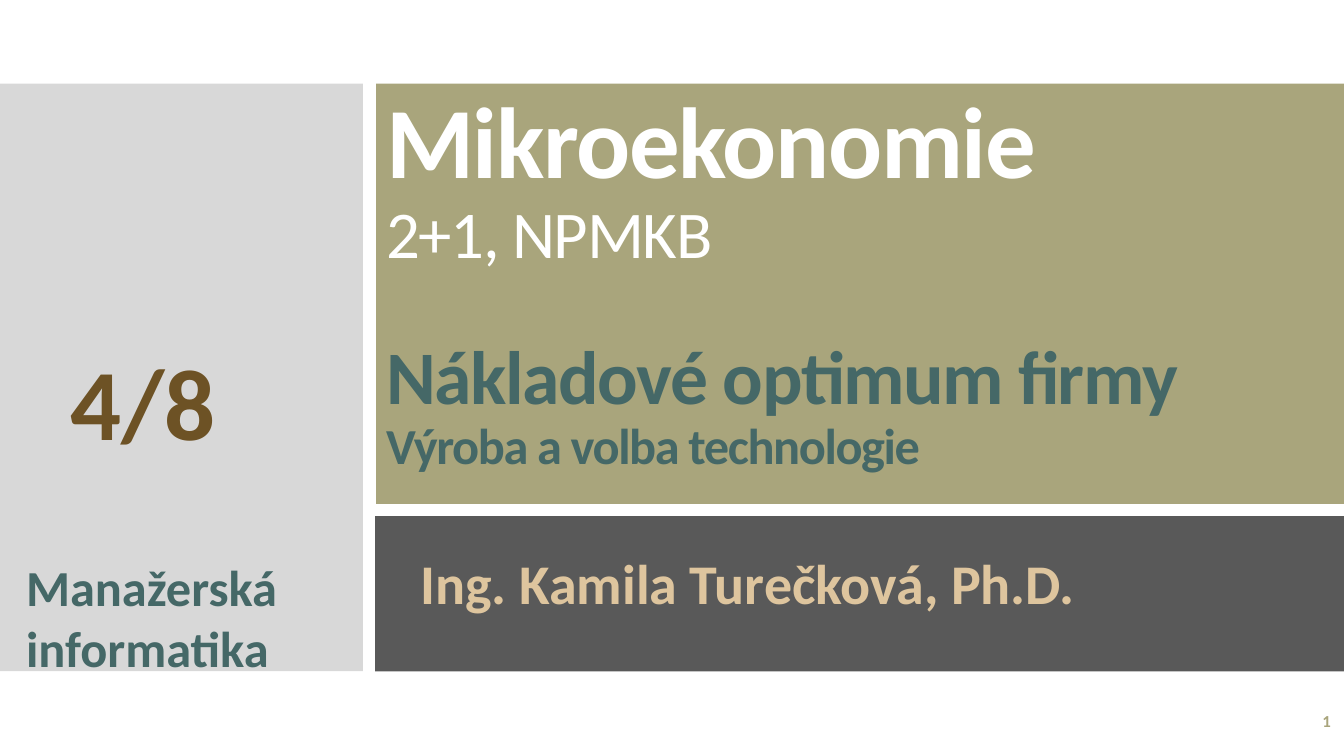
from dataclasses import dataclass

from lxml import etree
from pptx import Presentation
from pptx.dml.color import RGBColor
from pptx.enum.shapes import MSO_SHAPE
from pptx.enum.text import MSO_ANCHOR, MSO_AUTO_SIZE, PP_ALIGN
from pptx.oxml.ns import qn
from pptx.util import Inches, Pt

RECTANGLE = MSO_SHAPE.RECTANGLE
TOP, MIDDLE, BOTTOM = MSO_ANCHOR.TOP, MSO_ANCHOR.MIDDLE, MSO_ANCHOR.BOTTOM
LEFT, RIGHT = PP_ALIGN.LEFT, PP_ALIGN.RIGHT


@dataclass(frozen=True)
class Theme:
    font: str = "Calibri"
    white: str = "FFFFFF"
    olive: str = "A9A57C"
    grey: str = "C8C8C8"
    charcoal: str = "595959"
    teal: str = "456867"
    sand: str = "DEC59E"
    brown: str = "6D5225"
    display: float = 72
    topic: float = 54
    code: float = 47.7
    author: float = 40
    body: float = 36
    number: float = 12


theme = Theme()

# Content: text, size, colour, bold, space before in points
TITLE = [
    ("Mikroekonomie", theme.display, theme.white, True, 0),
    ("2+1, NPMKB", theme.code, theme.white, False, 0),
    ("Nákladové optimum firmy", theme.topic, theme.teal, True, 48),
    ("Výroba a volba technologie", theme.body, theme.teal, True, 0),
]
AUTHOR = [("Ing. Kamila Turečková, Ph.D.", theme.author, theme.sand, True, 0)]
LECTURE = [("4/8", theme.display, theme.brown, True, 0)]
PROGRAMME = [("Manažerská informatika", theme.body, theme.teal, True, 0)]
SLIDE_NUMBER = [("1", theme.number, theme.olive, True, 0)]

# Grid in inches: a side column, a gap, and a main column of two rows
WIDTH, HEIGHT = 13.33, 7.5
GAP = 0.13
BAND_TOP, BAND_BOTTOM = 0.83, 6.66
SIDE_WIDTH = 3.6
MAIN_LEFT = SIDE_WIDTH + GAP
MAIN_WIDTH = WIDTH - MAIN_LEFT
TITLE_HEIGHT = 4.17
AUTHOR_TOP = BAND_TOP + TITLE_HEIGHT + GAP - 0.01

# Panels: left, top, width, height, colour, opacity in percent
PANELS = [
    (0, BAND_TOP, SIDE_WIDTH, BAND_BOTTOM - BAND_TOP, theme.grey, 70),
    (MAIN_LEFT, BAND_TOP, MAIN_WIDTH, TITLE_HEIGHT, theme.olive, 100),
    (MAIN_LEFT - 0.01, AUTHOR_TOP, MAIN_WIDTH + 0.01,
     BAND_BOTTOM - AUTHOR_TOP, theme.charcoal, 100),
]

# Text boxes: lines, (left, top, width, height), line spacing, anchor, alignment
TEXT_BOXES = [
    (AUTHOR, (4.07, 5.47, 7.86, 0.84), 0.9, TOP, LEFT),
    (LECTURE, (0.6, 3.55, 2.63, 1.09), 0.8, TOP, LEFT),
    (PROGRAMME, (0.16, 5.47, 3.07, 1.31), 1.0, TOP, LEFT),
    (SLIDE_NUMBER, (11.63, 6.95, 1.67, 0.4), 1.0, MIDDLE, RIGHT),
]


def add_panel(slide, left, top, width, height, colour, opacity):
    panel = slide.shapes.add_shape(
        RECTANGLE, *map(Inches, (left, top, width, height)))
    panel.shadow.inherit = False
    panel.line.fill.background()
    panel.fill.solid()
    panel.fill.fore_color.rgb = RGBColor.from_string(colour)
    if opacity < 100:
        fill_colour = panel.element.spPr.find(qn("a:solidFill"))[0]
        alpha = etree.SubElement(fill_colour, qn("a:alpha"))
        alpha.set("val", str(opacity * 1000))


def write_lines(shape, lines, line_spacing, anchor, alignment):
    frame = shape.text_frame
    frame.word_wrap = True
    frame.auto_size = MSO_AUTO_SIZE.NONE
    frame.vertical_anchor = anchor
    frame.text = "\n".join(line[0] for line in lines)
    for paragraph, (_, size, colour, bold, before) in zip(frame.paragraphs, lines):
        paragraph.line_spacing = line_spacing
        paragraph.space_before = Pt(before)
        paragraph.alignment = alignment
        font = paragraph.runs[0].font
        font.name = theme.font
        font.size = Pt(size)
        font.bold = bold
        font.color.rgb = RGBColor.from_string(colour)


def main():
    presentation = Presentation()
    presentation.slide_width = Inches(WIDTH)
    presentation.slide_height = Inches(HEIGHT)
    slide = presentation.slides.add_slide(presentation.slide_layouts[5])

    # Coloured panels
    for panel in PANELS:
        add_panel(slide, *panel)

    # Title, moved in front of the panels
    title = slide.shapes.title
    title.left, title.top = Inches(MAIN_LEFT), Inches(1.42)
    title.width, title.height = Inches(MAIN_WIDTH), Inches(3.35)
    write_lines(title, TITLE, 0.9, BOTTOM, LEFT)
    for paragraph in title.text_frame.paragraphs:
        paragraph.runs[0].font._element.set("spc", "-100")
    slide.shapes.element.append(title.element)

    # Author, lecture, programme and slide number
    for lines, place, line_spacing, anchor, alignment in TEXT_BOXES:
        box = slide.shapes.add_textbox(*map(Inches, place))
        write_lines(box, lines, line_spacing, anchor, alignment)

    presentation.save("out.pptx")


if __name__ == "__main__":
    main()
